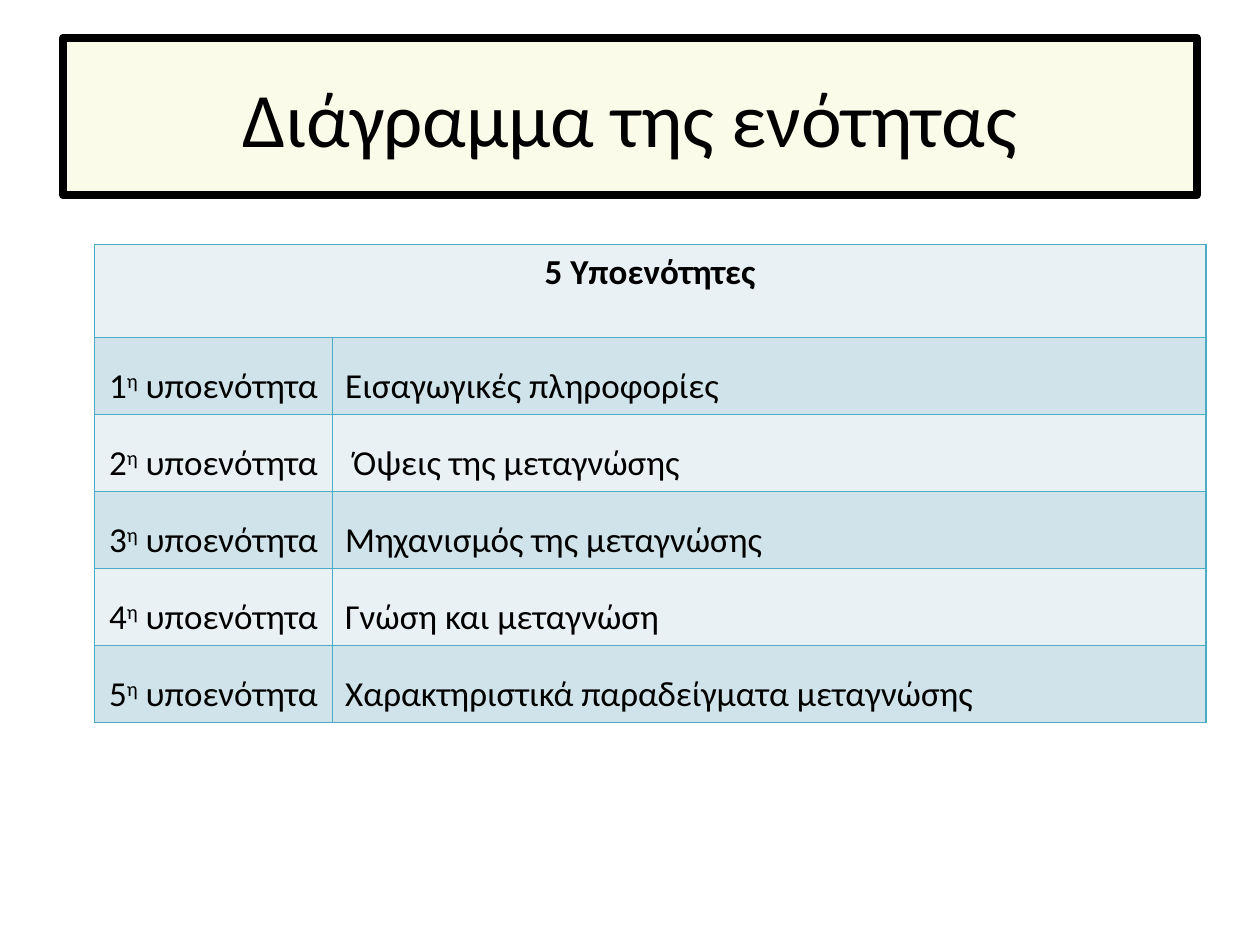
from lxml import etree
from pptx import Presentation
from pptx.dml.color import RGBColor
from pptx.enum.shapes import MSO_SHAPE
from pptx.enum.text import MSO_ANCHOR, PP_ALIGN
from pptx.oxml.ns import qn
from pptx.util import Inches, Pt

RECT = MSO_SHAPE.RECTANGLE
MIDDLE = MSO_ANCHOR.MIDDLE
CENTER, JUSTIFY = PP_ALIGN.CENTER, PP_ALIGN.JUSTIFY
BLACK = RGBColor(0x00, 0x00, 0x00)
CREAM = RGBColor(0xFB, 0xFB, 0xE9)
LIGHT = RGBColor(0xE9, 0xF1, 0xF5)
DARK = RGBColor(0xD0, 0xE3, 0xEA)
TEAL = RGBColor(0x4B, 0xAC, 0xC6)
FONT = "Calibri"
HEAD = "5 Υποενότητες"
TOPICS = [
    "Εισαγωγικές πληροφορίες",
    " Όψεις της μεταγνώσης",
    "Μηχανισμός της μεταγνώσης",
    "Γνώση και μεταγνώση",
    "Χαρακτηριστικά παραδείγματα μεταγνώσης",
]


def style(para, size, align, bold=False):
    para.alignment = align
    for run in para.runs:
        run.font.name = FONT
        run.font.size = Pt(size)
        run.font.bold = bold
        run.font.color.rgb = BLACK


def paint(cell, color):
    """Add the four borders, then the fill."""
    props = cell._tc.get_or_add_tcPr()
    for side in ("a:lnL", "a:lnR", "a:lnT", "a:lnB"):
        line = etree.SubElement(props, qn(side), w=str(Pt(1)))
        fill = etree.SubElement(line, qn("a:solidFill"))
        etree.SubElement(fill, qn("a:srgbClr"), val=str(TEAL))
    cell.fill.solid()
    cell.fill.fore_color.rgb = color


deck = Presentation()
deck.slide_width, deck.slide_height = Inches(10), Inches(7.5)
slide = deck.slides.add_slide(deck.slide_layouts[6])

# Title box
title = slide.shapes.add_shape(RECT, Inches(0.5), Inches(0.3), Inches(9), Inches(1.25))
title.shadow.inherit = False
title.fill.solid()
title.fill.fore_color.rgb = CREAM
title.line.color.rgb = BLACK
title.line.width = Pt(4.5)
frame = title.text_frame
frame.word_wrap = True
frame.vertical_anchor = MIDDLE
frame.text = "Διάγραμμα της ενότητας"
style(frame.paragraphs[0], 44, CENTER)

# Table grid
table = slide.shapes.add_table(len(TOPICS) + 1, 2, Inches(0.75), Inches(1.94),
                               Inches(8.82), Inches(3.79)).table
table.columns[0].width = Inches(1.89)
table.columns[1].width = Inches(6.93)
for i, row in enumerate(table.rows):
    row.height = Inches(0.61 if i else 0.74)
    for cell in row.cells:
        paint(cell, DARK if i % 2 else LIGHT)

# Heading row
top = table.cell(0, 0)
top.merge(table.cell(0, 1))
top.text_frame.text = HEAD
style(top.text_frame.paragraphs[0], 20, CENTER, bold=True)

# Numbered subunits
for i, topic in enumerate(TOPICS, 1):
    label = table.cell(i, 0).text_frame.paragraphs[0]
    for part in (str(i), "η", " υποενότητα"):
        label.add_run().text = part
    label.runs[1]._r.get_or_add_rPr().set("baseline", "30000")
    name = table.cell(i, 1).text_frame.paragraphs[0]
    name.text = topic
    for para, align in ((label, CENTER), (name, JUSTIFY)):
        style(para, 20, align)
        para.line_spacing = 1.5

deck.save("out.pptx")
